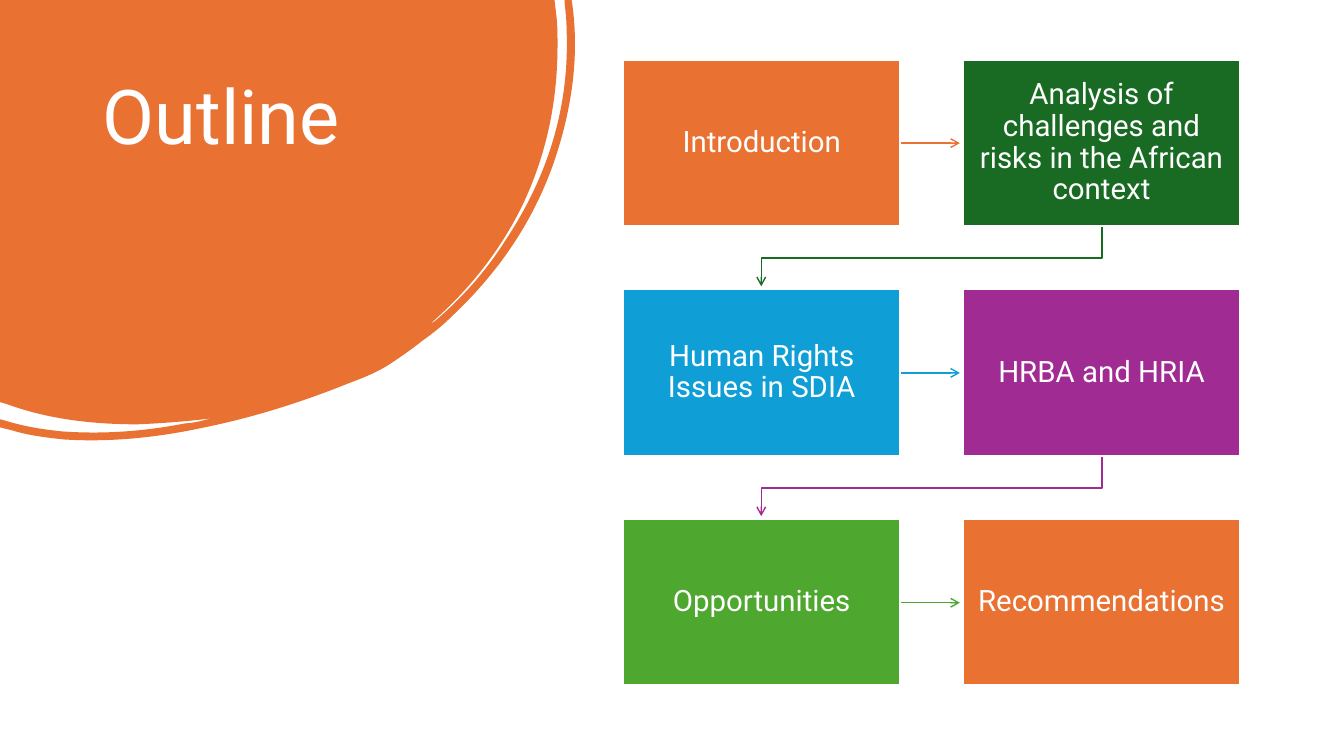
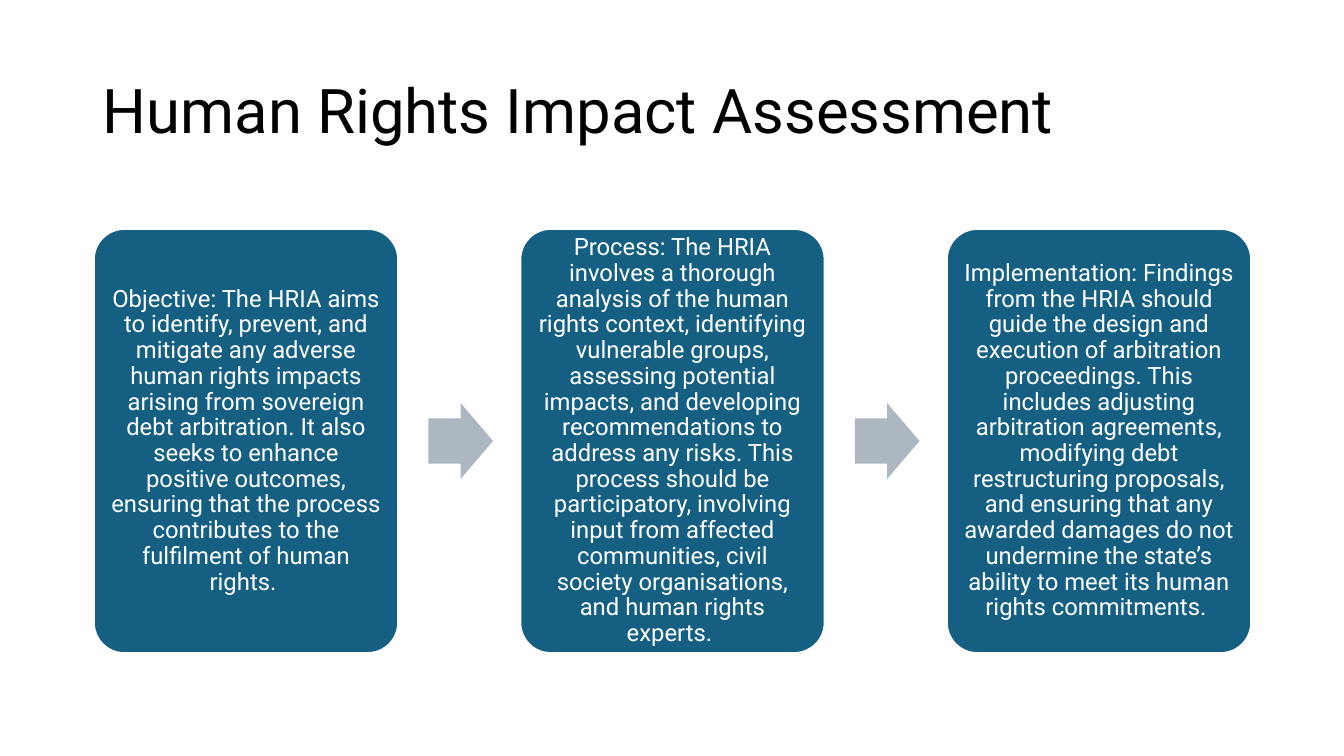
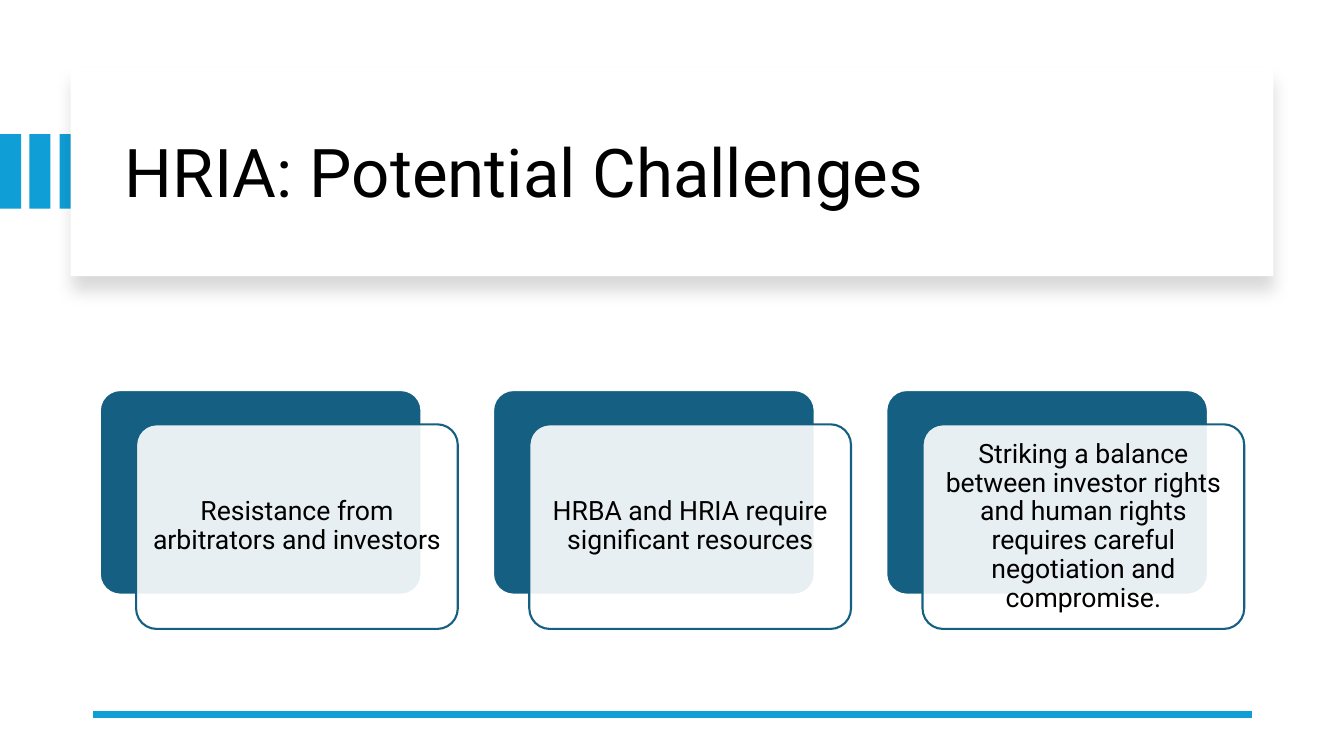
from lxml.etree import SubElement
from pptx import Presentation
from pptx.dml.color import RGBColor
from pptx.enum.shapes import MSO_CONNECTOR, MSO_SHAPE
from pptx.enum.text import MSO_ANCHOR, PP_ALIGN
from pptx.oxml.ns import qn
from pptx.util import Pt

PX = 9144
WIDTH, HEIGHT = 1333, 750

THEME = {
    "font": "Roboto",
    "white": "FFFFFF", "black": "000000", "orange": "E97132", "forest": "196B24",
    "blue": "0F9ED5", "purple": "A02B93", "green": "4EA72E", "teal": "156082",
    "grey": "ACB7C1",
    "outline_title": 54, "process_title": 44, "challenge_title": 48,
    "outline_text": 21, "process_text": 17, "challenge_text": 19,
    "border": 1.5, "arrow": 1, "rule": 4.5, "line_spacing": 0.9,
}

OUTLINE = [
    ("Introduction", "orange"),
    ("Analysis of challenges and risks in the African context", "forest"),
    ("Human Rights Issues in SDIA", "blue"),
    ("HRBA and HRIA", "purple"),
    ("Opportunities", "green"),
    ("Recommendations", "orange"),
]
STEPS = [
    "Objective: The HRIA aims to identify, prevent, and mitigate any adverse human rights "
    "impacts arising from sovereign debt arbitration. It also seeks to enhance positive "
    "outcomes, ensuring that the process contributes to the fulfilment of human rights. ",
    "Process: The HRIA involves a thorough analysis of the human rights context, identifying "
    "vulnerable groups, assessing potential impacts, and developing recommendations to address "
    "any risks. This process should be participatory, involving input from affected "
    "communities, civil society organisations, and human rights experts. ",
    "Implementation: Findings from the HRIA should guide the design and execution of "
    "arbitration proceedings. This includes adjusting arbitration agreements, modifying debt "
    "restructuring proposals, and ensuring that any awarded damages do not undermine the "
    "state’s ability to meet its human rights commitments. ",
]
CHALLENGES = [
    "Resistance from arbitrators and investors",
    "HRBA and HRIA require significant resources",
    "Striking a balance between investor rights and human rights requires careful "
    "negotiation and compromise.",
]
BLOB = [
    (0, 0), (550, 0), (552, 17),
    (553, 26, 553, 36, 553, 45), (553, 101, 542, 154, 518, 204),
    (496, 249, 465, 288, 427, 321), (429, 321, 430, 319, 432, 318),
    (459, 295, 482, 269, 501, 239), (543, 176, 565, 107, 562, 30),
    (562, 21, 561, 12, 560, 3), (560, 0), (567, 0), (568, 7),
    (574, 54, 568, 102, 553, 150), (533, 214, 497, 268, 448, 314),
    (439, 323, 429, 331, 419, 338), (409, 346, 399, 353, 387, 361),
    (375, 369, 360, 375, 344, 381), (299, 399, 252, 414, 203, 424),
    (157, 434, 110, 439, 63, 436), (45, 434, 28, 432, 12, 427),
    (0, 424), (0, 416), (4, 417),
    (23, 423, 42, 426, 61, 428), (103, 431, 143, 428, 184, 420),
    (189, 420, 193, 419, 198, 418), (202, 417, 206, 416, 210, 415),
    (186, 418, 161, 420, 136, 421), (92, 421, 48, 416, 7, 401), (0, 399),
]


def color(name):
    return RGBColor.from_string(THEME[name])


def emu(*lengths):
    return [round(length * PX) for length in lengths]


def apply(target, values):
    for name, value in values.items():
        setattr(target, name, value)


def write(shape, text, size, ink, align, anchor, insets):
    frame = shape.text_frame
    sides = ("margin_left", "margin_top", "margin_right", "margin_bottom")
    apply(frame, {"word_wrap": True, "vertical_anchor": anchor, **dict(zip(sides, emu(*insets)))})
    paragraph = frame.paragraphs[0]
    apply(paragraph, {"alignment": align, "line_spacing": THEME["line_spacing"]})
    run = paragraph.add_run()
    run.text = text
    apply(run.font, {"name": THEME["font"], "size": Pt(THEME[size])})
    run.font.color.rgb = color(ink)


def add_title(slide, box, text, size, ink="black", anchor=MSO_ANCHOR.MIDDLE):
    shape = slide.shapes.add_textbox(*emu(*box))
    write(shape, text, size, ink, PP_ALIGN.LEFT, anchor, (10, 5, 10, 5))


def stroke(shape, name, width):
    shape.line.color.rgb = color(name)
    shape.line.width = Pt(THEME[width])


def paint(shape, fill, line=None):
    shape.shadow.inherit = False
    if fill:
        shape.fill.solid()
        shape.fill.fore_color.rgb = color(fill)
    else:
        shape.fill.background()
    if line:
        stroke(shape, line, "border")
    else:
        shape.line.fill.background()


def add_box(slide, box, fill, line=None, kind=MSO_SHAPE.RECTANGLE, adjustments=()):
    shape = slide.shapes.add_shape(kind, *emu(*box))
    for index, value in enumerate(adjustments):
        shape.adjustments[index] = value
    paint(shape, fill, line)
    return shape


def add_round_box(slide, box, fill, line):
    return add_box(slide, box, fill, line, MSO_SHAPE.ROUNDED_RECTANGLE, (0.1,))


def fill_box(shape, text, size, ink, insets):
    write(shape, text, size, ink, PP_ALIGN.CENTER, MSO_ANCHOR.MIDDLE, insets)


def add_outline(slide, box, segments, closed=False):
    left, top, width, height = emu(*box)
    builder = slide.shapes.build_freeform(left, top)
    builder.add_line_segments([(left + width, top + height)], close=False)
    shape = builder.convert_to_shape()
    contour = next(shape.element.spPr.iter(qn("a:path")))
    for command in list(contour):
        contour.remove(command)
    for index, segment in enumerate(segments):
        tag = "a:moveTo" if index == 0 else "a:lnTo" if len(segment) == 2 else "a:cubicBezTo"
        command = SubElement(contour, qn(tag))
        lengths = emu(*segment)
        for x, y in zip(lengths[::2], lengths[1::2]):
            SubElement(command, qn("a:pt"), x=str(x), y=str(y))
    if closed:
        SubElement(contour, qn("a:close"))
    return shape


def add_arrow(slide, box, points, name):
    arrow = add_outline(slide, box, points)
    paint(arrow, None)
    stroke(arrow, name, "arrow")
    SubElement(arrow.element.spPr.find(qn("a:ln")), qn("a:tailEnd"), type="arrow")


def build_outline(slide):
    paint(add_outline(slide, (0, 0, 571, 437), BLOB, closed=True), "orange")
    add_title(slide, (92, 74, 352, 222), "Outline", "outline_title", "white", MSO_ANCHOR.TOP)
    left, top, width, height = 618, 59, 275, 165
    column_pitch, row_pitch, reach, elbow_width = 337, 228, 60, 338
    for index, (text, fill) in enumerate(OUTLINE):
        row, column = divmod(index, 2)
        x, y = left + column * column_pitch, top + row * row_pitch
        if column == 0:
            add_arrow(slide, (x + width - 1, y + 78, reach, 10), [(0, 5), (reach, 5)], fill)
        elif index < len(OUTLINE) - 1:
            elbow = [(elbow_width, 0), (elbow_width, 32), (0, 32), (0, reach)]
            start = x + width // 2 + 1 - elbow_width
            add_arrow(slide, (start, y + height, elbow_width, reach), elbow, fill)
        box = add_box(slide, (x, y, width, height), fill, "white")
        fill_box(box, text, "outline_text", "white", (13, 14, 13, 14))


def build_process(slide):
    add_title(slide, (92, 40, 1150, 145), "Human Rights Impact Assessment", "process_title")
    left, pitch = 93, 423
    for index, text in enumerate(STEPS):
        x = left + index * pitch
        box = add_round_box(slide, (x, 227, 302, 421), "teal", "white")
        fill_box(box, text, "process_text", "white", (7, 7, 7, 7))
        if index < len(STEPS) - 1:
            add_box(slide, (x + 332, 400, 64, 75), "grey",
                    kind=MSO_SHAPE.RIGHT_ARROW, adjustments=(0.6, 0.5))


def add_soft_shadow(shape):
    effects = shape.element.spPr.find(qn("a:effectLst"))
    shadow = SubElement(effects, qn("a:outerShdw"), blurRad=str(Pt(11)), dist=str(Pt(10)),
                        dir="5400000", algn="t", rotWithShape="0")
    ink = SubElement(shadow, qn("a:srgbClr"), val=THEME["black"])
    SubElement(ink, qn("a:alpha"), val="15000")


def set_opacity(shape, percent):
    ink = shape.element.spPr.find(qn("a:solidFill")).find(qn("a:srgbClr"))
    SubElement(ink, qn("a:alpha"), val=str(percent * 1000))


def add_rule(slide, ends, name):
    connector = slide.shapes.add_connector(MSO_CONNECTOR.STRAIGHT, *emu(*ends))
    stroke(connector, name, "rule")
    SubElement(connector.element.spPr, qn("a:effectLst"))


def build_challenges(slide):
    for index in range(3):
        add_box(slide, (index * 59 // 2, 133, 21, 74), "blue")
    add_soft_shadow(add_box(slide, (70, 67, 1193, 207), "white"))
    add_title(slide, (114, 89, 1113, 170), "HRIA: Potential Challenges", "challenge_title")
    add_rule(slide, (1242, 709, 92, 709), "blue")
    left, top, width, height, pitch = 99, 387, 319, 203, 390
    for index, text in enumerate(CHALLENGES):
        x = left + index * pitch
        add_round_box(slide, (x, top, width, height), "teal", "white")
        card = add_round_box(slide, (x + 36, top + 34, width, height), "white", "teal")
        set_opacity(card, 90)
        fill_box(card, text, "challenge_text", "black", (8, 8, 8, 8))


def main():
    presentation = Presentation()
    apply(presentation, dict(zip(("slide_width", "slide_height"), emu(WIDTH, HEIGHT))))
    for build in (build_outline, build_process, build_challenges):
        build(presentation.slides.add_slide(presentation.slide_layouts[6]))
    presentation.save("out.pptx")


if __name__ == "__main__":
    main()
